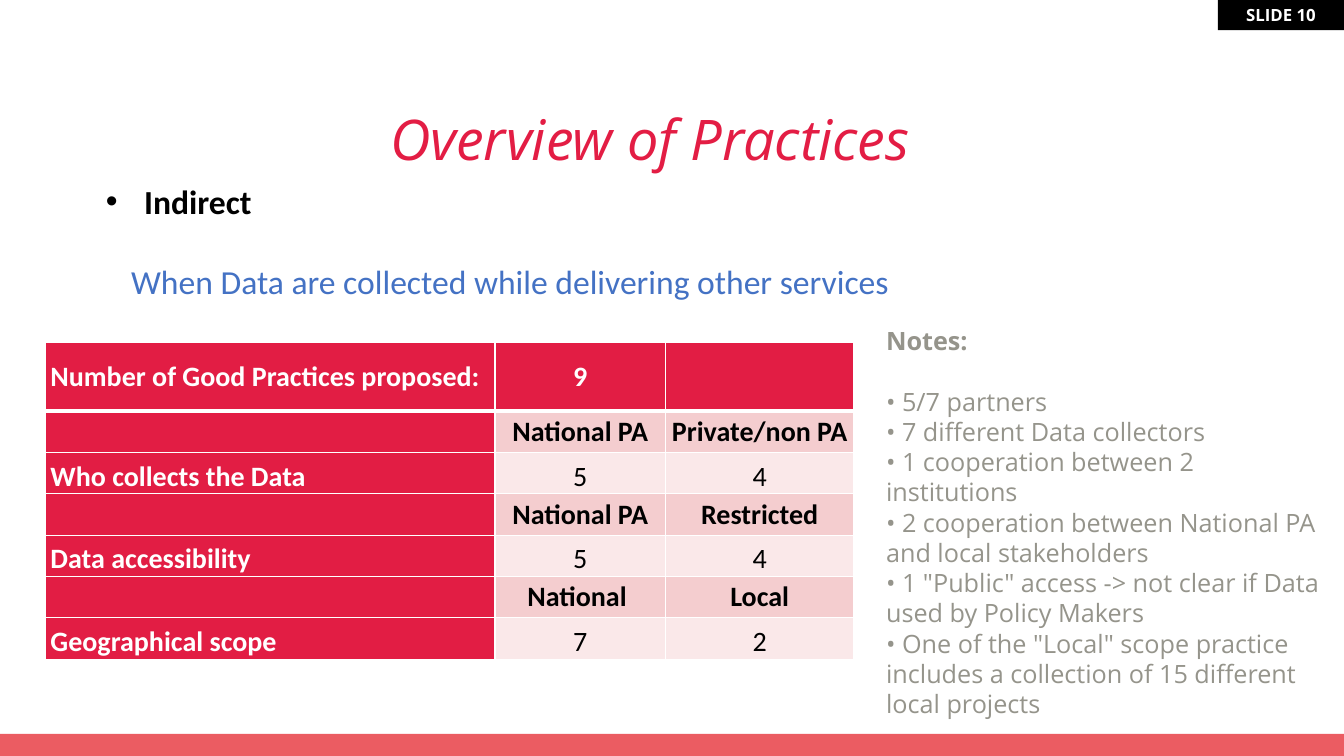
from dataclasses import dataclass

from lxml.etree import SubElement
from pptx import Presentation
from pptx.dml.color import RGBColor
from pptx.enum.shapes import MSO_SHAPE
from pptx.enum.text import MSO_ANCHOR, MSO_AUTO_SIZE, PP_ALIGN
from pptx.oxml.ns import qn
from pptx.util import Inches, Pt

RED, PINK, PALE = "E21D44", "F4CDCF", "FAE8E9"
WHITE, BLACK = "FFFFFF", "000000"


@dataclass
class Style:
    font: str
    size: float
    color: str
    bold: bool = False
    italic: bool = False


@dataclass
class Block:
    left: float
    top: float
    width: float
    height: float
    fill: str


@dataclass
class Topic:
    name: str
    headings: tuple[str, str]
    counts: tuple[str, str]


def rgb(color: str) -> RGBColor:
    return RGBColor.from_string(color)


def add_text(para, text: str, style: Style, align=PP_ALIGN.LEFT, before: float = 0) -> None:
    para.alignment = align
    para.space_before = Pt(before)
    span = para.add_run()
    span.text = text
    span.font.name = style.font
    span.font.size = Pt(style.size)
    span.font.bold = style.bold
    span.font.italic = style.italic
    span.font.color.rgb = rgb(style.color)


def set_bullet(para, symbol: str | None, margin: float, indent: float) -> None:
    properties = para._p.get_or_add_pPr()
    properties.set("marL", str(Inches(margin)))
    properties.set("indent", str(Inches(indent)))
    if symbol:
        SubElement(properties, qn("a:buFont"), typeface="Arial")
        SubElement(properties, qn("a:buChar"), char=symbol)
    else:
        SubElement(properties, qn("a:buNone"))


def place(shape, left: float, top: float, width: float, height: float):
    shape.left, shape.top = Inches(left), Inches(top)
    shape.width, shape.height = Inches(width), Inches(height)
    frame = shape.text_frame
    frame.word_wrap = True
    frame.auto_size = MSO_AUTO_SIZE.NONE
    frame.vertical_anchor = MSO_ANCHOR.TOP
    return frame


def add_block(page, block: Block):
    shape = page.shapes.add_shape(
        MSO_SHAPE.RECTANGLE, Inches(block.left), Inches(block.top),
        Inches(block.width), Inches(block.height))
    shape.shadow.inherit = False
    shape.fill.solid()
    shape.fill.fore_color.rgb = rgb(block.fill)
    shape.line.fill.background()
    return shape


def set_borders(cell, bottom: float) -> None:
    properties = cell._tc.get_or_add_tcPr()
    widths = {"a:lnL": 1, "a:lnR": 1, "a:lnT": 1, "a:lnB": bottom}
    for position, (tag, width) in enumerate(widths.items()):
        line = properties.makeelement(qn(tag), {"w": str(Pt(width))})
        fill = SubElement(line, qn("a:solidFill"))
        SubElement(fill, qn("a:srgbClr"), val=WHITE)
        properties.insert(position, line)


def fill_cell(cell, text: str, style: Style, fill: str, align, anchor, bottom: float) -> None:
    cell.fill.solid()
    cell.fill.fore_color.rgb = rgb(fill)
    cell.margin_left = cell.margin_right = Inches(0.05)
    cell.margin_top = cell.margin_bottom = 0
    cell.vertical_anchor = anchor
    if text:
        add_text(cell.text_frame.paragraphs[0], text, style, align)
    set_borders(cell, bottom)


def add_practice_table(page, topics: list[Topic]) -> None:
    rows = [("Number of Good Practices proposed:", "9", "")]
    for topic in topics:
        rows += [("", *topic.headings), (topic.name, *topic.counts)]
    table = page.shapes.add_table(
        len(rows), 3, Inches(0.45), Inches(3.4), Inches(8.02), Inches(3.15)).table
    for column, width in zip(table.columns, (4.46, 1.69, 1.87)):
        column.width = Inches(width)
    for r, row in enumerate(rows):
        table.rows[r].height = Inches(0.41 if r else 0.68)
        is_count = r > 0 and r % 2 == 0
        anchor = MSO_ANCHOR.BOTTOM if is_count else MSO_ANCHOR.MIDDLE
        for c, text in enumerate(row):
            is_red = r == 0 or c == 0
            fill = RED if is_red else PALE if is_count else PINK
            style = Style("Calibri", 20, WHITE if is_red else BLACK, is_red or not is_count)
            align = PP_ALIGN.CENTER if c else PP_ALIGN.LEFT
            fill_cell(table.cell(r, c), text, style, fill, align, anchor, 1 if r else 3)


def main() -> None:
    deck = Presentation()
    deck.slide_width, deck.slide_height = Inches(13.33), Inches(7.5)
    page = deck.slides.add_slide(deck.slide_layouts[1])

    # Footer bar and slide tag
    add_block(page, Block(0, 7.28, 13.33, 0.22, "EB5C62"))
    tag = add_block(page, Block(12.08, 0, 1.25, 0.3, BLACK)).text_frame
    tag.margin_top = tag.margin_bottom = 0
    tag.vertical_anchor = MSO_ANCHOR.MIDDLE
    add_text(tag.paragraphs[0], "SLIDE 10", Style("Open Sans", 12, WHITE, True),
             PP_ALIGN.CENTER)

    # Title
    title = place(page.shapes.title, 0.95, 0.85, 10.99, 0.85).paragraphs[0]
    title.line_spacing = 1.2
    add_text(title, "Overview of Practices", Style("Open Sans", 40, "E31D44", italic=True),
             PP_ALIGN.CENTER)

    # Practice type and its definition
    body = place(page.placeholders[1], 0.95, 1.74, 10.34, 1.51)
    kind = body.paragraphs[0]
    set_bullet(kind, "•", 0.38, -0.38)
    add_text(kind, "Indirect", Style("Calibri", 24, BLACK, True))
    definition = body.add_paragraph()
    set_bullet(definition, None, 0.25, 0)
    add_text(definition, "When Data are collected while delivering other services",
             Style("Calibri", 24, "4472C4"), before=29)

    # Notes
    notes_box = page.shapes.add_textbox(0, 0, 0, 0)
    notes = place(notes_box, 8.69, 3.18, 4.53, 4.1)
    add_text(notes.paragraphs[0], "Notes:", Style("Open Sans", 18, "95948B", True))
    remarks = [
        "• 5/7 partners",
        "• 7 different Data collectors",
        "• 1 cooperation between 2 institutions",
        "• 2 cooperation between National PA and local stakeholders",
        "• 1 \"Public\" access -> not clear if Data used by Policy Makers",
        "• One of the \"Local\" scope practice includes a collection of 15 different local projects",
    ]
    for position, remark in enumerate(remarks):
        add_text(notes.add_paragraph(), remark, Style("Open Sans", 18, "95948B"),
                 before=0 if position else 21.6)

    # Table of practices
    add_practice_table(page, [
        Topic("Who collects the Data", ("National PA", "Private/non PA"), ("5", "4")),
        Topic("Data accessibility", ("National PA", "Restricted"), ("5", "4")),
        Topic("Geographical scope", ("National ", "Local"), ("7", "2")),
    ])

    deck.save("out.pptx")


if __name__ == "__main__":
    main()
